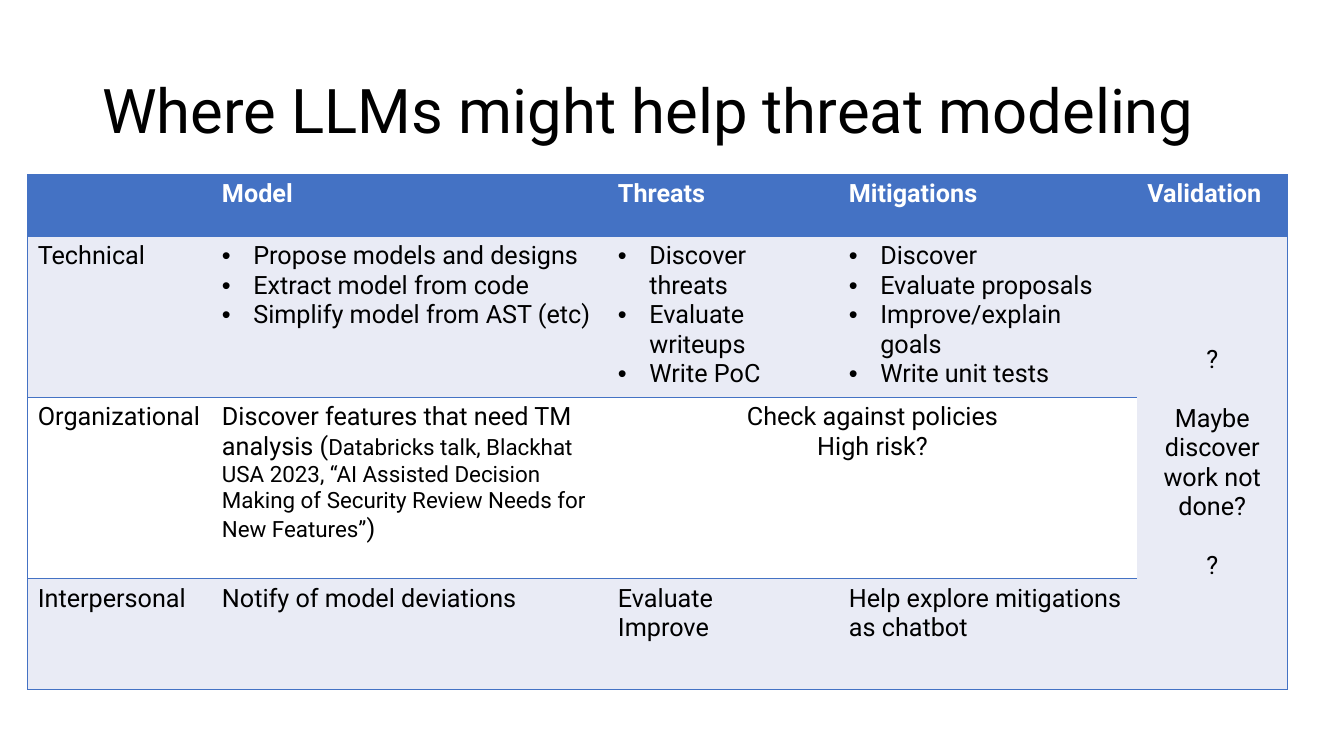
from dataclasses import dataclass

from lxml.etree import SubElement
from pptx import Presentation
from pptx.dml.color import RGBColor
from pptx.enum.text import MSO_ANCHOR, PP_ALIGN
from pptx.oxml.ns import qn
from pptx.util import Cm, Pt


@dataclass(frozen=True)
class Theme:
    font: str = "Roboto"
    ink: str = "000000"
    paper: str = "FFFFFF"
    accent: str = "4472C4"
    band: str = "E9EBF5"
    title_size: int = 44
    body_size: int = 18
    citation_size: int = 16
    border: int = 1


@dataclass
class Entry:
    runs: list
    bullet: bool = False
    centred: bool = False
    gap: int = 0


def lines(*texts, **options):
    return [Entry([(text, None)], **options) for text in texts]


class SlideBuilder:
    """Draws styled elements on the current slide."""

    def __init__(self, presentation, theme):
        self.theme = theme
        self.slide = presentation.slides.add_slide(presentation.slide_layouts[6])

    def add_run(self, paragraph, text, size, color, bold=False):
        run = paragraph.add_run()
        run.text = text
        run.font.name = self.theme.font
        run.font.size = Pt(size)
        run.font.bold = bold
        run.font.color.rgb = RGBColor.from_string(color)

    def add_title(self, text, left, top, width, height):
        shape = self.slide.shapes.add_textbox(Cm(left), Cm(top), Cm(width), Cm(height))
        frame = shape.text_frame
        frame.word_wrap = True
        frame.vertical_anchor = MSO_ANCHOR.MIDDLE
        paragraph = frame.paragraphs[0]
        paragraph.line_spacing = 0.9
        self.add_run(paragraph, text, self.theme.title_size, self.theme.ink)

    def add_bullet(self, paragraph):
        properties = paragraph._p.get_or_add_pPr()
        properties.set("marL", str(Cm(0.79)))
        properties.set("indent", str(Cm(-0.79)))
        SubElement(properties, qn("a:buFont"), typeface="Arial")
        SubElement(properties, qn("a:buChar"), char="•")

    def add_borders(self, cell, edges):
        properties = cell._tc.get_or_add_tcPr()
        for side, visible in edges.items():
            line = SubElement(properties, qn(f"a:ln{side}"), w=str(Pt(self.theme.border)))
            if visible:
                fill = SubElement(line, qn("a:solidFill"))
                SubElement(fill, qn("a:srgbClr"), val=self.theme.accent)
            else:
                SubElement(line, qn("a:noFill"))

    def fill_cell(self, cell, entries, color, bold):
        for index, entry in enumerate(entries):
            frame = cell.text_frame
            paragraph = frame.add_paragraph() if index else frame.paragraphs[0]
            if entry.bullet:
                self.add_bullet(paragraph)
            if entry.centred:
                paragraph.alignment = PP_ALIGN.CENTER
            if index and entry.gap:
                paragraph.space_before = Pt(entry.gap)
            for text, size in entry.runs:
                self.add_run(paragraph, text, size or self.theme.body_size, color, bold)

    def add_table(self, left, top, widths, heights, content, spans):
        shape = self.slide.shapes.add_table(
            len(heights), len(widths), Cm(left), Cm(top), Cm(sum(widths)), Cm(sum(heights)))
        table = shape.table
        for column, width in zip(table.columns, widths):
            column.width = Cm(width)
        for row, height in zip(table.rows, heights):
            row.height = Cm(height)
        for first, last in spans:
            table.cell(*first).merge(table.cell(*last))
        last_row, last_column = len(heights) - 1, len(widths) - 1
        fills = [self.theme.accent, self.theme.band, self.theme.paper, self.theme.band]
        for row in range(len(heights)):
            for column in range(len(widths)):
                cell = table.cell(row, column)
                inner = column < last_column
                self.add_borders(cell, {
                    "L": column == 0,
                    "R": column == last_column,
                    "T": inner or row <= 1,
                    "B": inner or row in (0, last_row) or cell.is_merge_origin,
                })
                cell.fill.solid()
                tall = cell.is_spanned and not inner
                color = self.theme.band if tall else fills[row]
                cell.fill.fore_color.rgb = RGBColor.from_string(color)
                ink = self.theme.ink if row else self.theme.paper
                self.fill_cell(cell, content.get((row, column), []), ink, row == 0)
        return table


def main():
    presentation = Presentation()
    presentation.slide_width = Cm(33.87)
    presentation.slide_height = Cm(19.05)
    theme = Theme()
    builder = SlideBuilder(presentation, theme)
    builder.add_title("Where LLMs might help threat modeling", 2.33, 1.02, 29.21, 3.68)

    citation = ("Databricks talk, Blackhat USA 2023, “AI Assisted Decision Making "
                "of Security Review Needs for New Features”")
    content = {
        (0, 1): lines("Model"),
        (0, 2): lines("Threats"),
        (0, 3): lines("Mitigations"),
        (0, 4): lines("Validation"),
        (1, 0): lines("Technical"),
        (1, 1): lines("Propose models and designs", "Extract model from code",
                      "Simplify model from AST (etc)", bullet=True),
        (1, 2): lines("Discover threats", "Evaluate writeups", "Write PoC", bullet=True),
        (1, 3): lines("Discover", "Evaluate proposals", "Improve/explain goals",
                      "Write unit tests", bullet=True),
        (1, 4): lines("?", "Maybe discover work not done?", "?", centred=True, gap=21),
        (2, 0): lines("Organizational"),
        (2, 1): [Entry([("Discover features that need TM analysis (", None),
                        (citation, theme.citation_size), (")", None)])],
        (2, 2): lines("Check against policies", "High risk?", centred=True),
        (3, 0): lines("Interpersonal"),
        (3, 1): lines("Notify of model deviations"),
        (3, 2): lines("Evaluate", "Improve"),
        (3, 3): lines("Help explore mitigations as chatbot"),
    }
    table = builder.add_table(
        0.7, 4.4, [4.64, 9.98, 5.82, 7.52, 3.78], [1.55, 4.06, 4.57, 2.8],
        content, [((1, 4), (3, 4)), ((2, 2), (2, 3))])
    table.cell(1, 4).vertical_anchor = MSO_ANCHOR.MIDDLE
    presentation.save("out.pptx")


if __name__ == "__main__":
    main()
